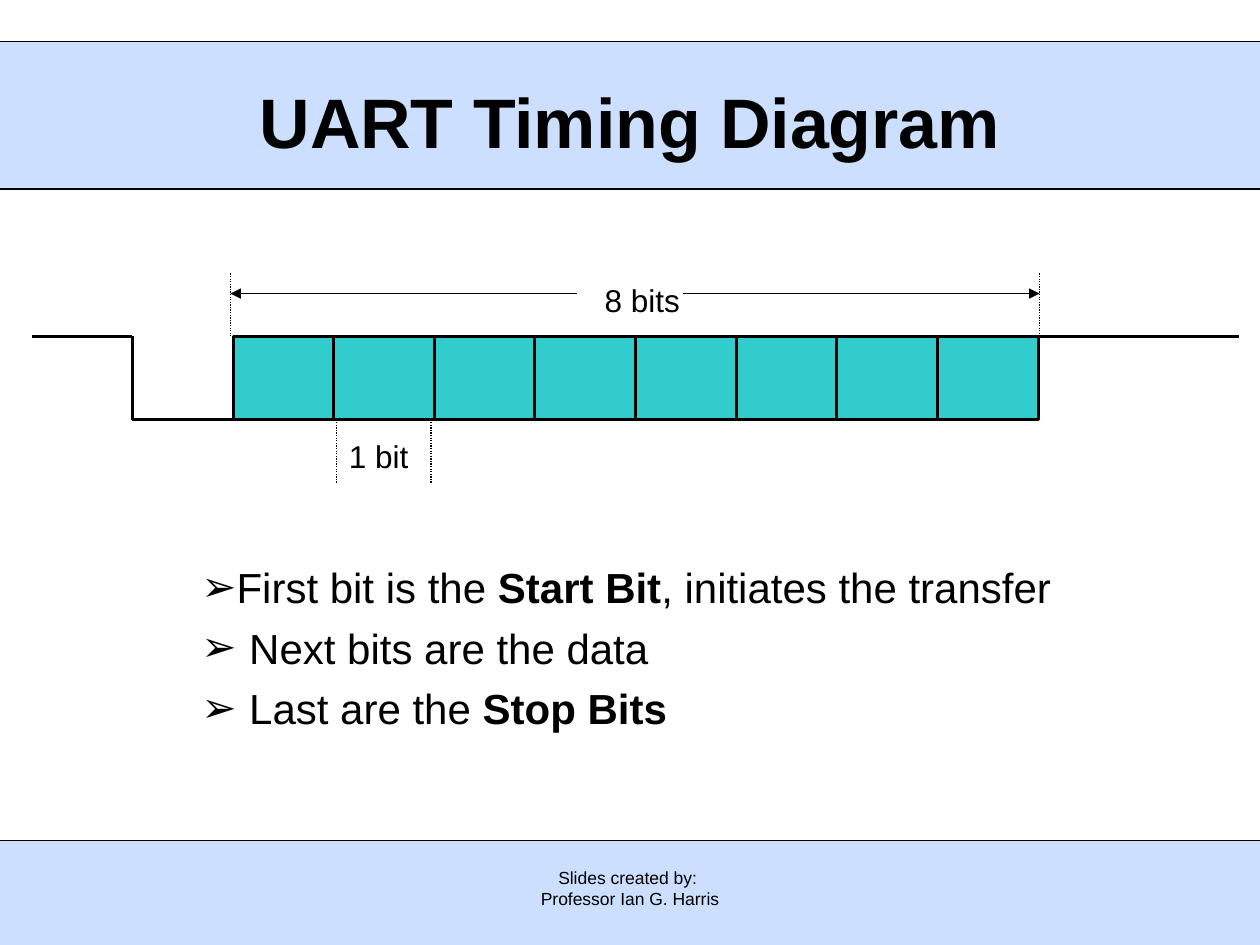
"""Build a slide that explains the timing of a UART transfer."""
import lxml.etree
import pptx
import pptx.dml.color
import pptx.enum.dml
import pptx.enum.shapes
import pptx.enum.text
import pptx.oxml.ns
import pptx.util

Inches = pptx.util.Inches
BLACK = pptx.dml.color.RGBColor(0x00, 0x00, 0x00)
PALE_BLUE = pptx.dml.color.RGBColor(0xCD, 0xDF, 0xFF)
TEAL = pptx.dml.color.RGBColor(0x33, 0xCC, 0xCC)
CENTER = pptx.enum.text.PP_ALIGN.CENTER
LEFT = pptx.enum.text.PP_ALIGN.LEFT
FONT = "Arial"

SLIDE_WIDTH = 10
BIT_COUNT = 8
BIT_WIDTH = 0.8
DATA_LEFT = 1.85
DATA_RIGHT = 8.24
HIGH, LOW = 2.67, 3.33
THIN, THICK = 0.75, 1.75


def add_box(slide, left, top, width, height, fill, outline, weight):
    box = slide.shapes.add_shape(
        pptx.enum.shapes.MSO_SHAPE.RECTANGLE,
        Inches(left), Inches(top), Inches(width), Inches(height))
    box.shadow.inherit = False
    box.fill.solid()
    box.fill.fore_color.rgb = fill
    box.line.color.rgb = outline
    box.line.width = pptx.util.Pt(weight)


def add_line(slide, start, end, weight=THIN, dotted=False, arrow=False):
    line = slide.shapes.add_connector(
        pptx.enum.shapes.MSO_CONNECTOR.STRAIGHT,
        *(Inches(length) for length in start + end))
    line.line.color.rgb = BLACK
    line.line.width = pptx.util.Pt(weight)
    if dotted:
        line.line.dash_style = pptx.enum.dml.MSO_LINE.ROUND_DOT
    if arrow:
        lxml.etree.SubElement(line.line._get_or_add_ln(),
                              pptx.oxml.ns.qn("a:tailEnd"), type="triangle")
    lxml.etree.SubElement(line._element.spPr, pptx.oxml.ns.qn("a:effectLst"))


def add_text(slide, left, top, width, height, paragraphs, size,
             align=LEFT, wrap=False):
    """Add a text box; each paragraph is a list of (text, bold) runs."""
    text_box = slide.shapes.add_textbox(
        Inches(left), Inches(top), Inches(width), Inches(height))
    frame = text_box.text_frame
    frame.word_wrap = wrap
    for index, runs in enumerate(paragraphs):
        paragraph = frame.paragraphs[0] if index == 0 else frame.add_paragraph()
        paragraph.alignment = align
        for text, bold in runs:
            run = paragraph.add_run()
            run.text = text
            run.font.name = FONT
            run.font.size = pptx.util.Pt(size)
            run.font.bold = bold
            run.font.color.rgb = BLACK
    return frame


def add_bullet(paragraph, hanging):
    paragraph.line_spacing = 1.2
    properties = paragraph._p.get_or_add_pPr()
    properties.set("marL", str(Inches(hanging)))
    properties.set("indent", str(-Inches(hanging)))
    color = lxml.etree.SubElement(properties, pptx.oxml.ns.qn("a:buClr"))
    lxml.etree.SubElement(color, pptx.oxml.ns.qn("a:srgbClr"), val=str(BLACK))
    lxml.etree.SubElement(properties, pptx.oxml.ns.qn("a:buFont"), typeface=FONT)
    lxml.etree.SubElement(properties, pptx.oxml.ns.qn("a:buChar"), char="➢")


def add_bands(slide):
    for top, height in ((6.67, 0.83), (0.33, 1.17)):
        add_box(slide, 0, top, SLIDE_WIDTH, height, PALE_BLUE, PALE_BLUE, THIN)
    for y in (0.33, 1.5, 6.67):
        add_line(slide, (0, y), (SLIDE_WIDTH, y))
    add_text(slide, 3.42, 6.83, 3.16, 0.49,
             [[("Slides created by: ", False)],
              [("Professor Ian G. Harris", False)]], 10, CENTER, True)
    title = add_text(slide, 0.75, 0.33, 8.5, 1.25,
                     [[("UART Timing Diagram", True)]], 40, CENTER, True)
    title.vertical_anchor = pptx.enum.text.MSO_ANCHOR.MIDDLE


def add_signal(slide):
    for bit in range(BIT_COUNT):
        add_box(slide, DATA_LEFT + bit * (DATA_RIGHT - DATA_LEFT) / BIT_COUNT,
                HIGH, BIT_WIDTH, LOW - HIGH, TEAL, BLACK, THICK)
    start_bit = DATA_LEFT - BIT_WIDTH
    levels = [(start_bit - BIT_WIDTH, HIGH), (start_bit, HIGH),
              (start_bit, LOW), (DATA_LEFT, LOW)]
    for start, end in zip(levels, levels[1:]):
        add_line(slide, start, end, THICK)
    add_line(slide, (DATA_RIGHT, HIGH), (9.83, HIGH), THICK)


def add_dimensions(slide):
    for x in (2.67, 3.42):
        add_line(slide, (x, LOW), (x, LOW + 0.5), dotted=True)
    add_text(slide, 2.67, 3.42, 0.67, 0.4, [[("1 bit", False)]], 18)
    for label_edge, x in ((4.58, 1.83), (5.42, 8.25)):
        add_line(slide, (x, HIGH - 0.5), (x, HIGH), dotted=True)
        add_line(slide, (label_edge, 2.33), (x, 2.33), arrow=True)
    add_text(slide, 4.7, 2.18, 0.8, 0.4, [[("8 bits", False)]], 18)


def add_explanation(slide):
    explanation = add_text(slide, 1.5, 4.33, 7, 1.56, [
        [("First bit is the ", False), ("Start Bit", True),
         (", initiates the transfer", False)],
        [("Next bits are the data", False)],
        [("Last are the ", False), ("Stop Bits", True)]], 24)
    for paragraph, hanging in zip(explanation.paragraphs, (0, 0.38, 0.38)):
        add_bullet(paragraph, hanging)


def main():
    presentation = pptx.Presentation()
    presentation.slide_width = Inches(SLIDE_WIDTH)
    presentation.slide_height = Inches(7.5)
    slide = presentation.slides.add_slide(presentation.slide_layouts[6])
    add_bands(slide)
    add_explanation(slide)
    add_signal(slide)
    add_dimensions(slide)
    presentation.save("out.pptx")


if __name__ == "__main__":
    main()
